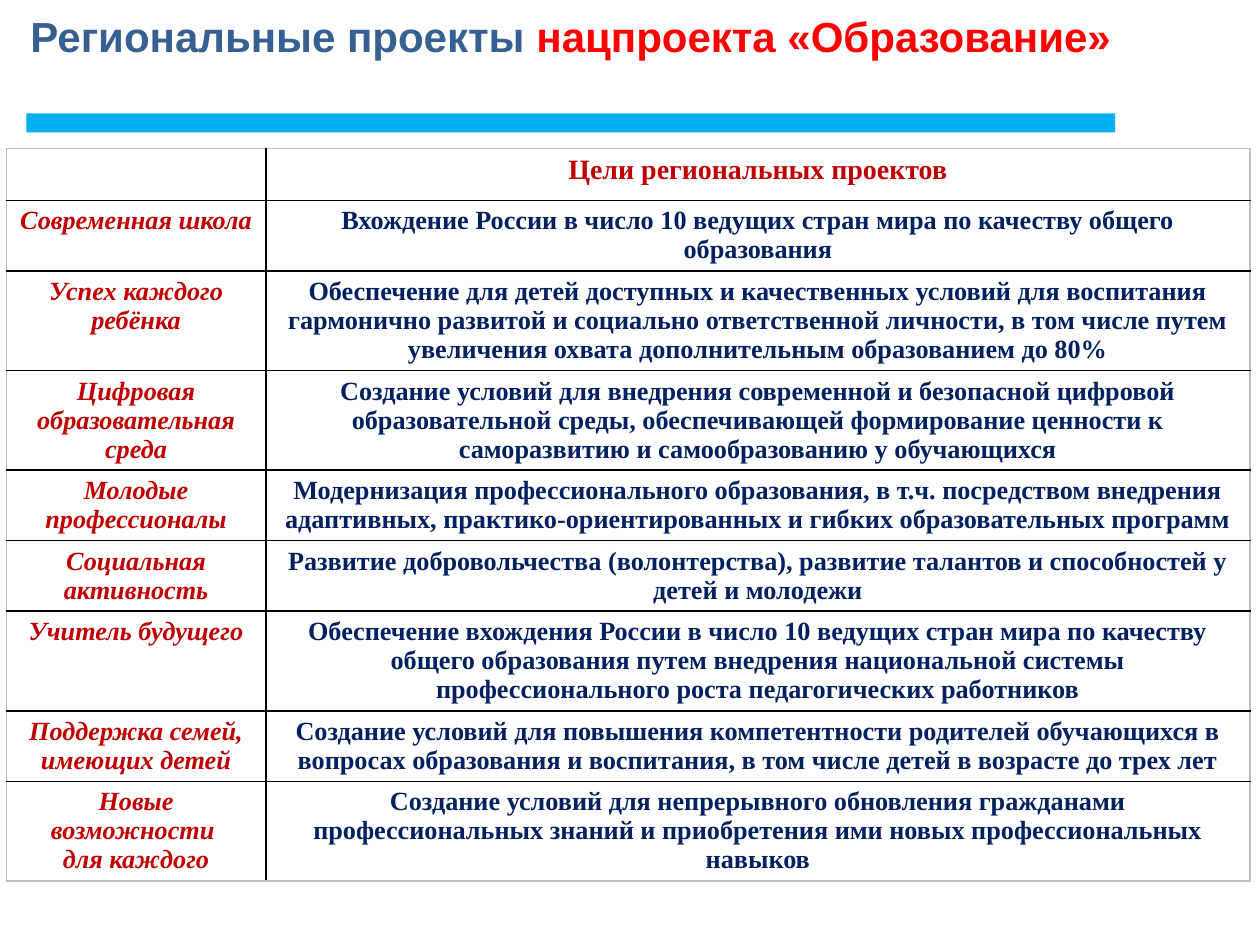
from typing import NamedTuple

from lxml.etree import SubElement
from pptx import Presentation
from pptx.dml.color import RGBColor
from pptx.enum.shapes import MSO_SHAPE as Shape
from pptx.enum.text import MSO_ANCHOR as Anchor, PP_ALIGN as Align
from pptx.oxml.ns import qn
from pptx.util import Inches, Pt

COLORS = {
    "title": "376092",
    "accent": "FF0000",
    "bar": "00B0F0",
    "name": "C00000",
    "goal": "002060",
    "inner": "000000",
    "outer": "BFBFBF",
    "white": "FFFFFF",
}


class Project(NamedTuple):
    name: str
    goal: str


PROJECTS = [
    Project("Современная школа",
            "Вхождение России в число 10 ведущих стран мира по качеству общего образования"),
    Project("Успех каждого ребёнка",
            "Обеспечение для детей доступных и качественных условий для воспитания "
            "гармонично развитой и социально ответственной личности, в том числе путем "
            "увеличения охвата дополнительным образованием до 80%"),
    Project("Цифровая образовательная среда",
            "Создание условий для внедрения современной и безопасной цифровой "
            "образовательной среды, обеспечивающей формирование ценности к "
            "саморазвитию и самообразованию у обучающихся"),
    Project("Молодые профессионалы",
            "Модернизация профессионального образования, в т.ч. посредством внедрения "
            "адаптивных, практико-ориентированных и гибких образовательных программ"),
    Project("Социальная активность",
            "Развитие добровольчества (волонтерства), развитие талантов и способностей "
            "у детей и молодежи"),
    Project("Учитель будущего",
            "Обеспечение вхождения России в число 10 ведущих стран мира по качеству "
            "общего образования путем внедрения национальной системы "
            "профессионального роста педагогических работников"),
    Project("Поддержка семей, имеющих детей",
            "Создание условий для повышения компетентности родителей обучающихся в "
            "вопросах образования и воспитания, в том числе детей в возрасте до трех лет"),
    Project("Новые возможности \nдля каждого",
            "Создание условий для непрерывного обновления гражданами "
            "профессиональных знаний и приобретения ими новых профессиональных навыков"),
]


def rgb(key: str) -> RGBColor:
    return RGBColor.from_string(COLORS[key])


def add_title(slide) -> None:
    sp = slide.shapes.title
    sp.left, sp.top, sp.width, sp.height = map(Inches, (0, 0.03, 9.06, 0.85))
    tf = sp.text_frame
    tf.word_wrap = True
    tf.vertical_anchor = Anchor.TOP
    p = tf.paragraphs[0]
    p.alignment = Align.CENTER
    p.font.name, p.font.size, p.font.bold = "Arial", Pt(24), True
    for text, color in (("Региональные проекты ", "title"),
                        ("нацпроекта «Образование»", "accent")):
        r = p.add_run()
        r.text = text
        r.font.color.rgb = rgb(color)


def add_bar(slide) -> None:
    sp = slide.shapes.add_shape(
        Shape.RECTANGLE, Inches(0.21), Inches(0.9), Inches(8.64), Inches(0.15))
    sp.shadow.inherit = False
    sp.fill.solid()
    sp.fill.fore_color.rgb = rgb("bar")
    sp.line.fill.background()


def set_borders(cell, edges: dict[str, bool]) -> None:
    props = cell._tc.get_or_add_tcPr()
    for side, is_outer in edges.items():
        ln = SubElement(props, qn(f"a:ln{side}"), w=str(Pt(1)))
        fill = SubElement(ln, qn("a:solidFill"))
        SubElement(fill, qn("a:srgbClr"), val=COLORS["outer" if is_outer else "inner"])


def write_cell(cell, text: str, color: str, size: int, italic: bool) -> None:
    cell.fill.solid()
    cell.fill.fore_color.rgb = rgb("white")
    tf = cell.text_frame
    tf.text = text
    for p in tf.paragraphs:
        p.alignment = Align.CENTER
        p.font.name, p.font.size = "Times New Roman", Pt(size)
        p.font.bold, p.font.italic = True, italic
        p.font.color.rgb = rgb(color)


def add_goals_table(slide) -> None:
    rows = [Project("", "Цели региональных проектов"), *PROJECTS]
    row_height = Inches(0.41)
    table = slide.shapes.add_table(
        len(rows), 2, Inches(0.05), Inches(1.18), Inches(9.87),
        row_height * len(rows)).table
    table.first_row = table.horz_banding = False
    for column, width in zip(table.columns, (2.06, 7.81)):
        column.width = Inches(width)
    for i, project in enumerate(rows):
        table.rows[i].height = row_height
        for j, text in enumerate(project):
            cell = table.cell(i, j)
            set_borders(cell, {"L": j == 0, "R": j == 1,
                               "T": i == 0, "B": i == len(rows) - 1})
            is_header = i == 0
            write_cell(cell, text,
                       color="name" if is_header or j == 0 else "goal",
                       size=16 if is_header else 15,
                       italic=j == 0)


def main() -> None:
    prs = Presentation()
    prs.slide_width, prs.slide_height = Inches(10), Inches(7.5)
    s = prs.slides.add_slide(prs.slide_layouts[5])
    add_bar(s)
    add_title(s)
    add_goals_table(s)
    prs.save("out.pptx")


if __name__ == "__main__":
    main()
